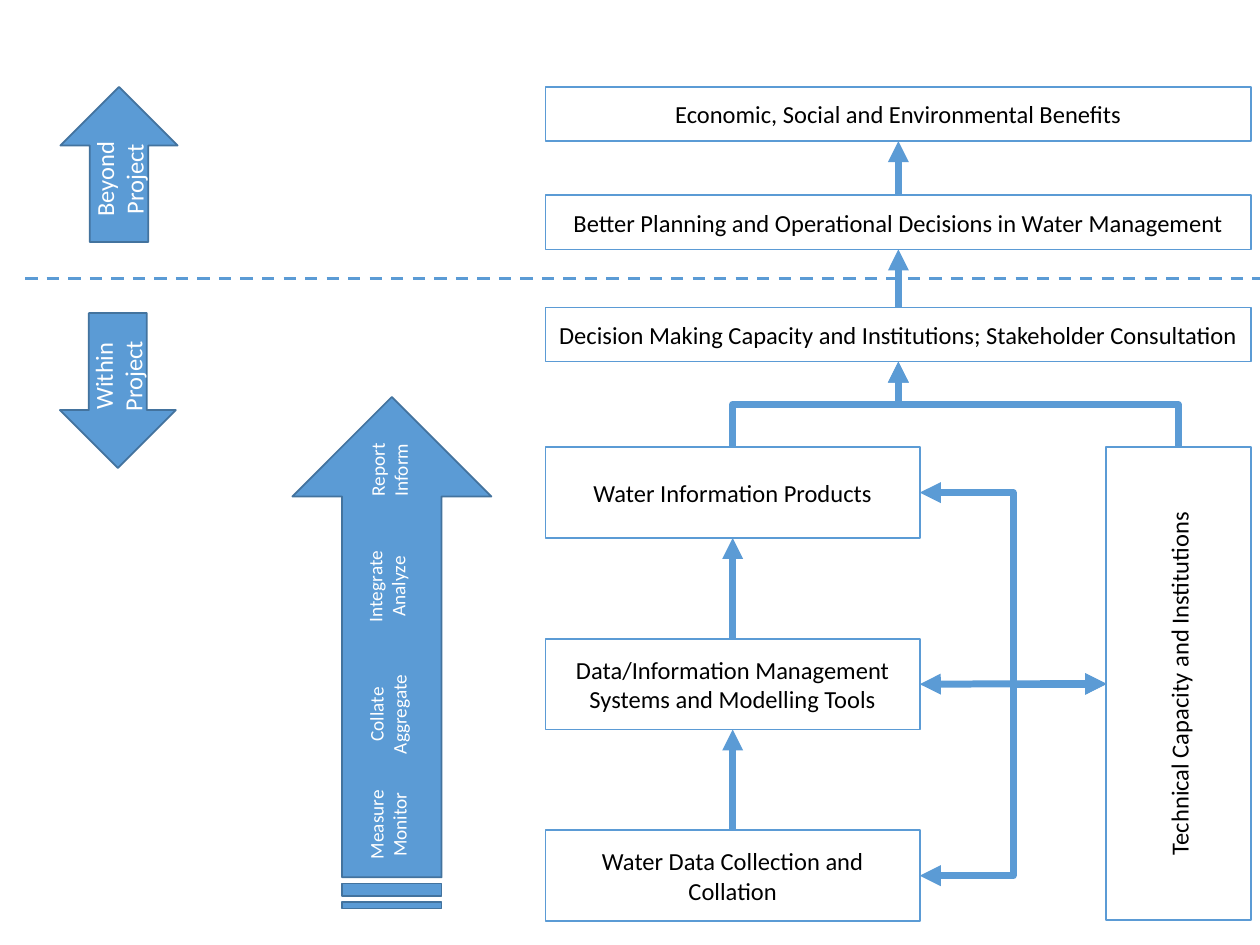
from dataclasses import dataclass

from lxml.etree import SubElement
from pptx import Presentation
from pptx.dml.color import RGBColor
from pptx.enum.dml import MSO_LINE
from pptx.enum.shapes import MSO_CONNECTOR as Link, MSO_SHAPE as Kind
from pptx.enum.text import MSO_ANCHOR, PP_ALIGN
from pptx.oxml.ns import qn
from pptx.util import Inches, Pt


@dataclass(frozen=True)
class Theme:
    font: str = "Calibri"
    blue: str = "5B9BD5"
    edge: str = "43739E"
    white: str = "FFFFFF"
    black: str = "000000"
    body: int = 14
    small: int = 11
    thin: float = 1
    dash: float = 1.75
    thick: float = 4


class Board:
    def __init__(self, slide, theme):
        self.shapes = slide.shapes
        self.theme = theme

    def letter(self, shape, text, size, color, upward=False):
        frame = shape.text_frame
        frame.text = text
        frame.word_wrap = True
        frame.vertical_anchor = MSO_ANCHOR.MIDDLE
        if upward:
            frame._txBody.bodyPr.set("vert", "vert270")
        for para in frame.paragraphs:
            para.alignment = PP_ALIGN.CENTER
            for run in para.runs:
                run.font.name = self.theme.font
                run.font.size = Pt(size)
                run.font.color.rgb = RGBColor.from_string(color)

    def shape(self, kind, area, fill, edge):
        item = self.shapes.add_shape(kind, *map(Inches, area))
        item.shadow.inherit = False
        item.fill.solid()
        item.fill.fore_color.rgb = RGBColor.from_string(fill)
        item.line.color.rgb = RGBColor.from_string(edge)
        item.line.width = Pt(self.theme.thin)
        return item

    def box(self, text, area, upward=False):
        look = self.theme
        item = self.shape(Kind.RECTANGLE, area, look.white, look.blue)
        self.letter(item, text, look.body, look.black, upward)
        return item

    def arrow(self, kind, area, turn, text="", flip=False):
        look = self.theme
        item = self.shape(kind, area, look.blue, look.edge)
        item.rotation = turn
        if flip:
            item._element.spPr.find(qn("a:xfrm")).set("flipV", "1")
        if text:
            self.letter(item, text, look.body, look.white)

    def label(self, text, area):
        item = self.shapes.add_textbox(*map(Inches, area))
        self.letter(item, text, self.theme.small, self.theme.white, True)

    def line(self, kind, start, end, width, tips=()):
        item = self.shapes.add_connector(kind, *map(Inches, (*start, *end)))
        item.line.color.rgb = RGBColor.from_string(self.theme.blue)
        item.line.width = Pt(width)
        props = item._element.spPr
        for tip in tips:
            SubElement(props.find(qn("a:ln")), qn(f"a:{tip}"), type="triangle")
        SubElement(props, qn("a:effectLst"))
        return item

    def join(self, source, side, target, port, tips=("tailEnd",)):
        item = self.line(Link.STRAIGHT, (0, 0), (1, 1), self.theme.thick, tips)
        item.begin_connect(source, side)
        item.end_connect(target, port)

    def bend(self, start, end):
        """Two-headed elbow that leaves sideways."""
        self.line(Link.ELBOW, start, end, self.theme.thick, ("headEnd", "tailEnd"))

    def rise(self, start, end):
        """Elbow that leaves upward: a sideways one turned about its centre."""
        (x1, y1), (x2, y2) = start, end
        mid_x, mid_y = (x1 + x2) / 2, (y1 + y2) / 2
        half_w, half_h = (y1 - y2) / 2, (x2 - x1) / 2
        item = self.line(Link.ELBOW, (mid_x - half_w, mid_y - half_h),
                         (mid_x + half_w, mid_y + half_h),
                         self.theme.thick, ("tailEnd",))
        item._element.spPr.find(qn("a:xfrm")).set("rot", str(270 * 60000))

    def divide(self, start, end):
        item = self.line(Link.STRAIGHT, start, end, self.theme.dash)
        item.line.dash_style = MSO_LINE.DASH


def main():
    deck = Presentation()
    deck.slide_width, deck.slide_height = Inches(10), Inches(7.5)
    board = Board(deck.slides.add_slide(deck.slide_layouts[6]), Theme())

    board.arrow(Kind.STRIPED_RIGHT_ARROW, (1.08, 4.39, 4.06, 1.58), 270)

    left, wide, slim = 4.33, 5.6, 2.97
    gains, plans, choice = [
        board.box(text, (left, top, wide, 0.43)) for text, top in (
            ("Economic, Social and Environmental Benefits", 0.69),
            ("Better Planning and Operational Decisions in Water Management", 1.55),
            ("Decision Making Capacity and Institutions; Stakeholder Consultation", 2.44),
        )]
    first, step, tall = 3.55, 1.52, 0.72
    goods, tools, data = [
        board.box(text, (left, first + row * step, slim, tall))
        for row, text in enumerate((
            "Water Information Products",
            "Data/Information Management Systems and Modelling Tools",
            "Water Data Collection and Collation",
        ))]
    skills = board.box("Technical Capacity and Institutions",
                       (8.78, first, 1.15, 3.75), upward=True)

    for source, target in ((data, tools), (tools, goods),
                           (choice, plans), (plans, gains)):
        board.join(source, 0, target, 2)
    for x in (left + slim / 2, 9.35):
        board.rise((x, first), (left + wide / 2, 2.87))

    hub = 5.43
    for y in (hub + step, hub - step):
        board.bend((8.78, hub), (left + slim, y))
    board.join(skills, 1, tools, 3, ("headEnd", "tailEnd"))

    for text, area in (
        ("Measure\nMonitor", (2.85, 5.9, 0.45, 1.29)),
        ("Collate\nAggregate", (2.85, 5.1, 0.45, 1.14)),
        ("Integrate\nAnalyze", (2.84, 4.11, 0.45, 1.09)),
        ("Report\nInform", (2.87, 3.27, 0.43, 0.92)),
    ):
        board.label(text, area)

    board.divide((0.2, 2.21), (10, 2.21))
    board.arrow(Kind.RIGHT_ARROW, (0.33, 0.84, 1.23, 0.93), 270, "Beyond Project")
    board.arrow(Kind.RIGHT_ARROW, (0.32, 2.64, 1.23, 0.92), 90,
                "Within Project", flip=True)
    deck.save("out.pptx")


if __name__ == "__main__":
    main()
